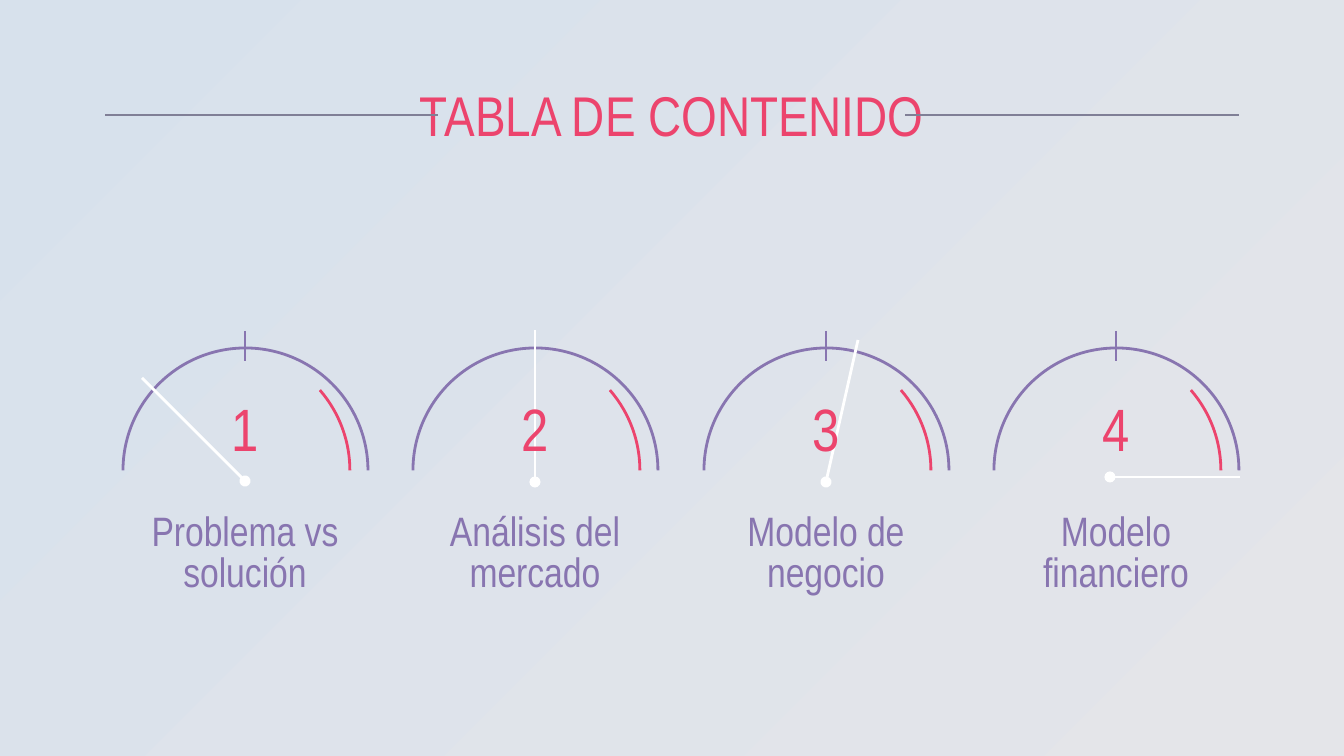
from lxml import etree
from pptx import Presentation
from pptx.dml.color import RGBColor
from pptx.enum.shapes import MSO_CONNECTOR, MSO_SHAPE
from pptx.enum.text import MSO_ANCHOR, PP_ALIGN
from pptx.oxml.ns import qn
from pptx.util import Emu, Pt

ARC = MSO_SHAPE.ARC
STRAIGHT = MSO_CONNECTOR.STRAIGHT
MIDDLE = MSO_ANCHOR.MIDDLE
CENTER = PP_ALIGN.CENTER

PINK, PURPLE, WHITE, GRAY = "EC446D", "8875B0", "FFFFFF", "807F96"
FONT = "Arial Narrow"
TITLE = "TABLA DE CONTENIDO"
BACKGROUND = [(0, "E4E5E9"), (1, "D7E1EC")]
TITLE_RULES = [(438, 105), (1239, 905)]
GAUGES = [
    {"label": "Problema vs solución", "needle": (0, 481, -103, 378), "tick": True},
    {"label": "Análisis del mercado", "needle": (0, 482, 0, 330), "tick": False},
    {"label": "Modelo de negocio", "needle": (0, 482, 32, 340), "tick": True},
    {"label": "Modelo financiero", "needle": (-6, 477, 124, 477), "tick": True},
]
FIRST_X, LAST_X = 245, 1116
ARC_TOP, ARC_SIZE = 348, 245
DIAL_START, DANGER_START = 108, 191.41


def px(n):
    return Emu(round(n * 914400 / 134.4))


def rgb(color):
    return RGBColor.from_string(color)


def add_arc(slide, x, start, color):
    sp = slide.shapes.add_shape(ARC, px(x), px(ARC_TOP), px(ARC_SIZE), px(ARC_SIZE))
    sp.adjustments[0] = start
    sp.adjustments[1] = 0
    sp.shadow.inherit = False
    sp.fill.background()
    sp.line.color.rgb = rgb(color)
    sp.line.width = Pt(1.5)


def add_line(slide, x1, y1, x2, y2, color, width=1.5, dot=False):
    line = slide.shapes.add_connector(STRAIGHT, px(x1), px(y1), px(x2), px(y2))
    line.line.color.rgb = rgb(color)
    line.line.width = Pt(width)
    if dot:
        etree.SubElement(line.line._get_or_add_ln(), qn("a:headEnd"), type="oval")
    etree.SubElement(line._element.spPr, qn("a:effectLst"))


def add_text(slide, text, x, y, w, h, size, color, spacing=1.0, side=13):
    tf = slide.shapes.add_textbox(px(x), px(y), px(w), px(h)).text_frame
    tf.word_wrap = True
    tf.vertical_anchor = MIDDLE
    tf.margin_left = tf.margin_right = px(side)
    tf.margin_top = tf.margin_bottom = px(13)
    p = tf.paragraphs[0]
    p.text = text
    p.alignment = CENTER
    p.line_spacing = spacing
    p.font.name = FONT
    p.font.size = Pt(size)
    p.font.color.rgb = rgb(color)


def add_gauge(slide, number, cx, gauge):
    add_arc(slide, cx - 122, DIAL_START, PURPLE)
    add_arc(slide, cx - 140, DANGER_START, PINK)
    if gauge["tick"]:
        add_line(slide, cx, 331, cx, 361, PURPLE)
    x1, y1, x2, y2 = gauge["needle"]
    add_line(slide, cx + x1, y1, cx + x2, y2, WHITE, dot=True)
    add_text(slide, str(number), cx - 39, 396, 78, 63, 32, PINK, side=0)
    add_text(slide, gauge["label"], cx - 109, 509, 218, 91, 22, PURPLE, spacing=0.85)


def main():
    prs = Presentation()
    prs.slide_width, prs.slide_height = px(1344), px(756)
    slide = prs.slides.add_slide(prs.slide_layouts[6])
    fill = slide.background.fill
    fill.gradient()
    fill.gradient_angle = 135
    for stop, (position, color) in zip(fill.gradient_stops, BACKGROUND):
        stop.position = position
        stop.color.rgb = rgb(color)

    add_text(slide, TITLE, 105, 79, 1134, 70, 30, PINK)
    for x1, x2 in TITLE_RULES:
        add_line(slide, x1, 115, x2, 115, GRAY, 0.75)

    pitch = (LAST_X - FIRST_X) / (len(GAUGES) - 1)
    for i, gauge in enumerate(GAUGES):
        add_gauge(slide, i + 1, round(FIRST_X + i * pitch), gauge)
    prs.save("out.pptx")


if __name__ == "__main__":
    main()
